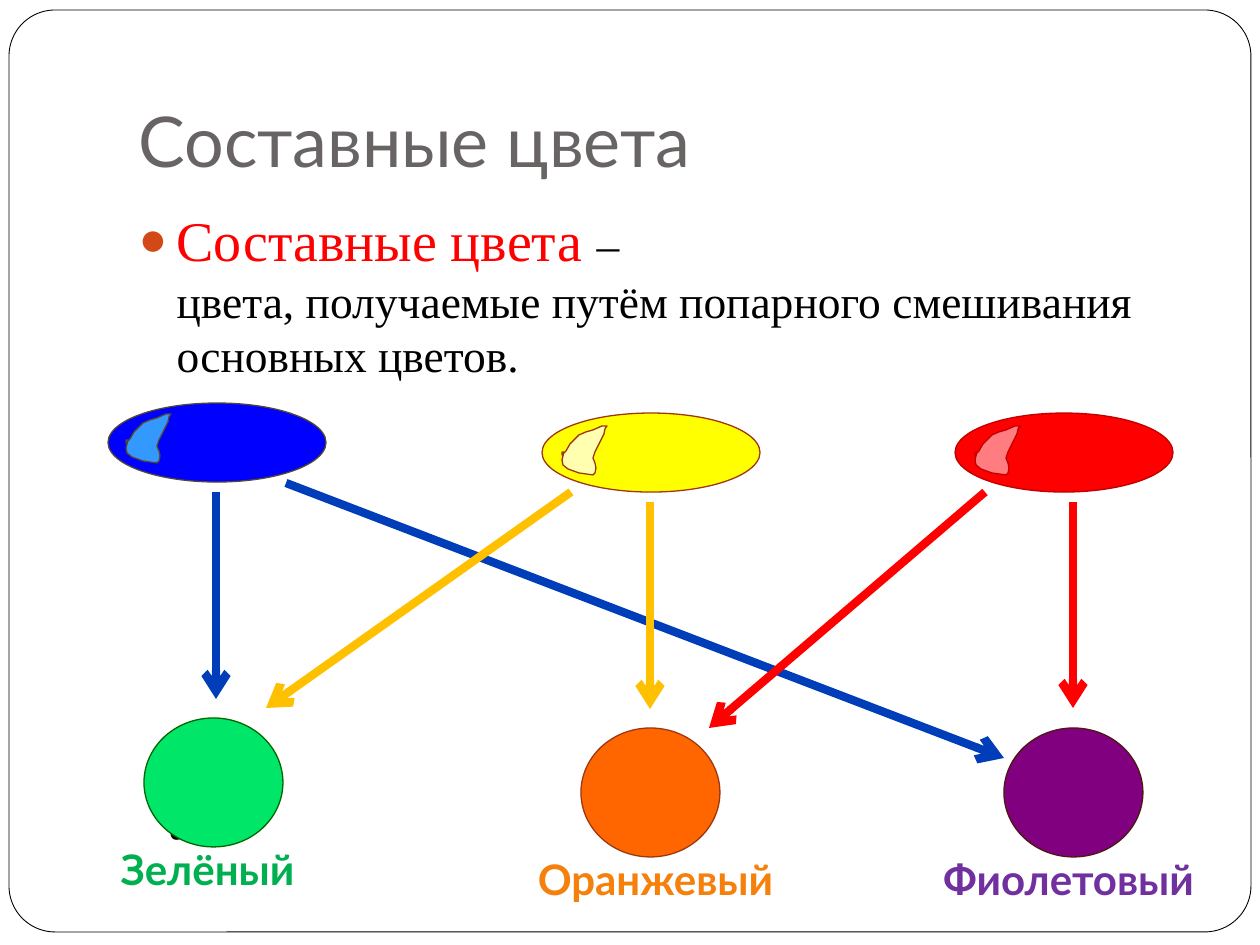
from pptx import Presentation
from pptx.dml.color import RGBColor
from pptx.enum.shapes import MSO_CONNECTOR as Connector, MSO_SHAPE as Shape
from pptx.enum.text import MSO_ANCHOR as Anchor, PP_ALIGN as Align
from pptx.oxml.ns import qn
from pptx.util import Emu, Pt
from lxml.etree import SubElement

SCALE = 914400 / 126  # EMU per px
COLORS = {
    "white": "FFFFFF", "black": "000000", "title": "696464", "bullet": "D34817",
    "red": "FF0000", "blue": "003DB8", "amber": "FFC000",
}


def px(*lengths):
    return [Emu(round(length * SCALE)) for length in lengths]


def add_text(para, text, font, size, color, bold=False):
    span = para.add_run()
    span.text = text
    span.font.name = font
    span.font.size = Pt(size)
    span.font.bold = bold
    span.font.color.rgb = RGBColor.from_string(color)


deck = Presentation()
deck.slide_width, deck.slide_height = px(1260, 945)
page = deck.slides.add_slide(deck.slide_layouts[1])
shapes = page.shapes

# Rounded page frame, behind everything else
frame = shapes.add_shape(Shape.ROUNDED_RECTANGLE, *px(9, 10, 1242, 922))
frame.adjustments[0] = 0.05
frame.shadow.inherit = False
frame.fill.solid()
frame.fill.fore_color.rgb = RGBColor.from_string(COLORS["white"])
frame.line.color.rgb = RGBColor.from_string(COLORS["black"])
frame.line.width = Pt(0.5)
shapes._spTree.insert(2, frame._element)

# Title
title = shapes.title
title.left, title.top, title.width, title.height = px(126, 38, 1071, 157)
title.text_frame.vertical_anchor = Anchor.BOTTOM
title.text_frame.margin_bottom = px(13)[0]
para = title.text_frame.paragraphs[0]
para.alignment = Align.LEFT
add_text(para, "Составные цвета", "Lato", 40, COLORS["title"])

# Definition
body = page.placeholders[1]
body.left, body.top, body.width, body.height = px(126, 199, 1071, 630)
para = body.text_frame.paragraphs[0]
para.space_before = Pt(0)
props = para._p.get_or_add_pPr()
indent = px(38)[0]
props.set("marL", str(indent))
props.set("indent", str(-indent))
bullet_color = SubElement(props, qn("a:buClr"))
SubElement(bullet_color, qn("a:srgbClr"), val=COLORS["bullet"])
SubElement(props, qn("a:buSzPct"), val="85000")
SubElement(props, qn("a:buChar"), char="●")
add_text(para, "Составные цвета ", "Times New Roman", 32, COLORS["red"])
add_text(para, "– ", "Times New Roman", 26, COLORS["black"])
para.add_line_break()
add_text(para, "цвета, получаемые путём попарного смешивания основных цветов.",
         "Times New Roman", 26, COLORS["black"])

# Question mark peeking out from under the green circle
box = shapes.add_textbox(*px(147, 718, 110, 151))
box.text_frame.word_wrap = True
add_text(box.text_frame.paragraphs[0], "?", "Cambria", 66, COLORS["black"])

# Primary paints: left, top, fill, outline, highlight, highlight opacity, highlight shift
paints = [
    (108, 403, "0000FF", "534733", "3399FF", 100, 0),
    (542, 413, "FFFF00", "9E3611", "FFFFCC", 86, 2),
    (955, 413, "FF0000", "C00000", "FF7C80", 100, 2),
]
highlight_points = [
    (49, 15), (42, 17), (35, 20), (30, 25), (26, 29), (22, 36), (18, 40), (18, 37),
    (20, 37), (18, 45), (19, 50), (24, 54), (35, 58), (42, 59), (49, 60), (51, 58),
    (52, 53), (51, 48), (49, 43), (51, 37), (55, 29), (58, 23), (60, 19), (61, 14),
    (63, 11), (58, 11),
]
for left, top, fill, outline, highlight, opacity, shift in paints:
    paint = shapes.add_shape(Shape.OVAL, *px(left, top, 218, 79))
    points = [px(left + shift + x, top + shift + y) for x, y in highlight_points]
    builder = shapes.build_freeform(*points[0])
    builder.add_line_segments(points[1:], close=True)
    glint = builder.convert_to_shape()
    for part, color in ((paint, fill), (glint, highlight)):
        part.shadow.inherit = False
        part.fill.solid()
        part.fill.fore_color.rgb = RGBColor.from_string(color)
        part.line.color.rgb = RGBColor.from_string(outline)
        part.line.width = Pt(0.75)
    if opacity < 100:
        rgb = glint._element.spPr.find(qn("a:solidFill")).find(qn("a:srgbClr"))
        SubElement(rgb, qn("a:alpha"), val=str(opacity * 1000))

# Mixing arrows: start, end, color
arrows = [
    (1073, 502, 1073, 708, "red"),
    (286, 483, 1004, 758, "blue"),
    (216, 492, 216, 699, "blue"),
    (571, 492, 266, 708, "amber"),
    (650, 502, 650, 709, "amber"),
    (985, 492, 709, 728, "red"),
]
for *ends, color in arrows:
    arrow = shapes.add_connector(Connector.STRAIGHT, *px(*ends))
    arrow.line.color.rgb = RGBColor.from_string(COLORS[color])
    arrow.line.width = Pt(4.75)
    SubElement(arrow.line._get_or_add_ln(), qn("a:tailEnd"), type="arrow")
    SubElement(arrow._element.spPr, qn("a:effectLst"))

# Mixed colors: circle left, top, fill, outline, label left, label, label color
mixes = [
    (144, 718, "00E668", "006600", 64, "Зелёный", "00B050"),
    (581, 728, "FF6600", "9E3611", 512, "Оранжевый", "F5800B"),
    (1004, 728, "800080", "4E1710", 925, "Фиолетовый", "7030A0"),
]
for left, top, fill, outline, label_left, label, label_color in mixes:
    circle = shapes.add_shape(Shape.OVAL, *px(left, top, 139, 129))
    circle.shadow.inherit = False
    circle.fill.solid()
    circle.fill.fore_color.rgb = RGBColor.from_string(fill)
    circle.line.color.rgb = RGBColor.from_string(outline)
    circle.line.width = Pt(0.75)
    box = shapes.add_textbox(*px(label_left, top + 119, 287, 63))
    box.text_frame.word_wrap = True
    para = box.text_frame.paragraphs[0]
    para.alignment = Align.CENTER
    add_text(para, label, "Lato", 24, label_color, bold=True)

deck.save("out.pptx")
